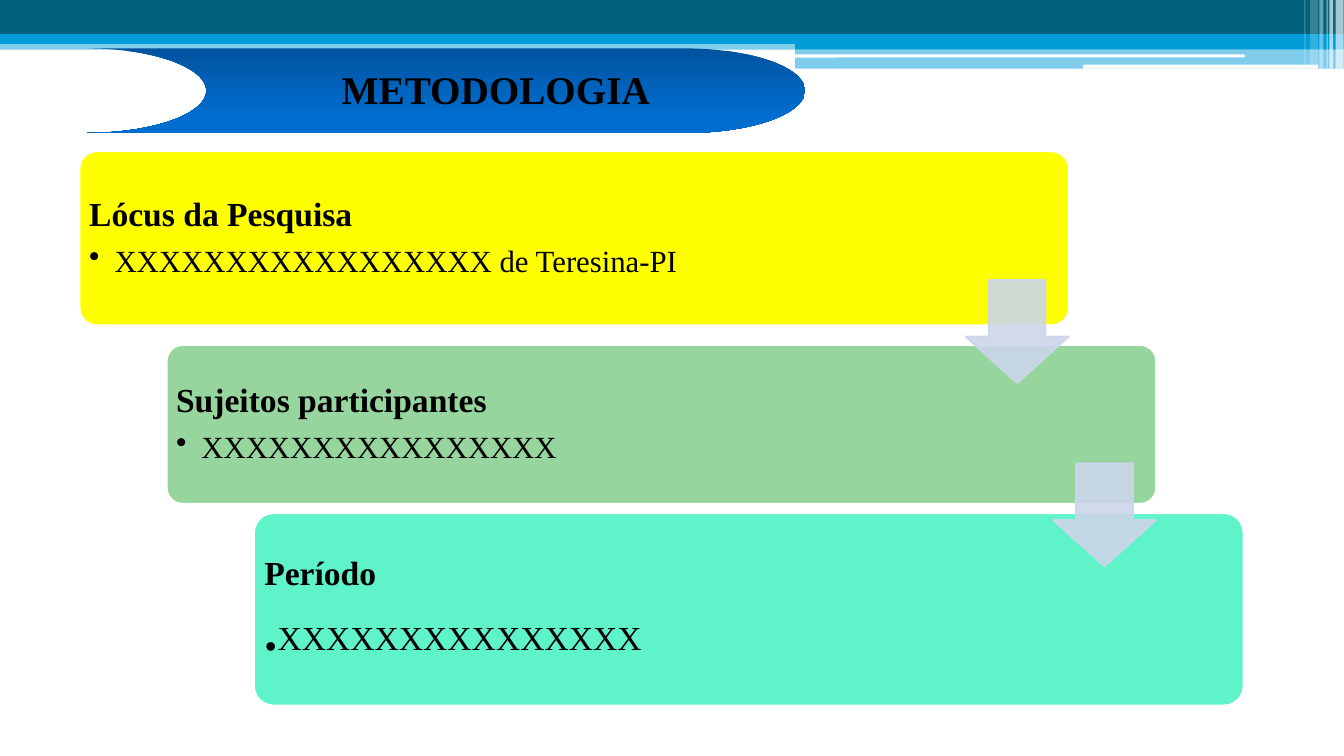
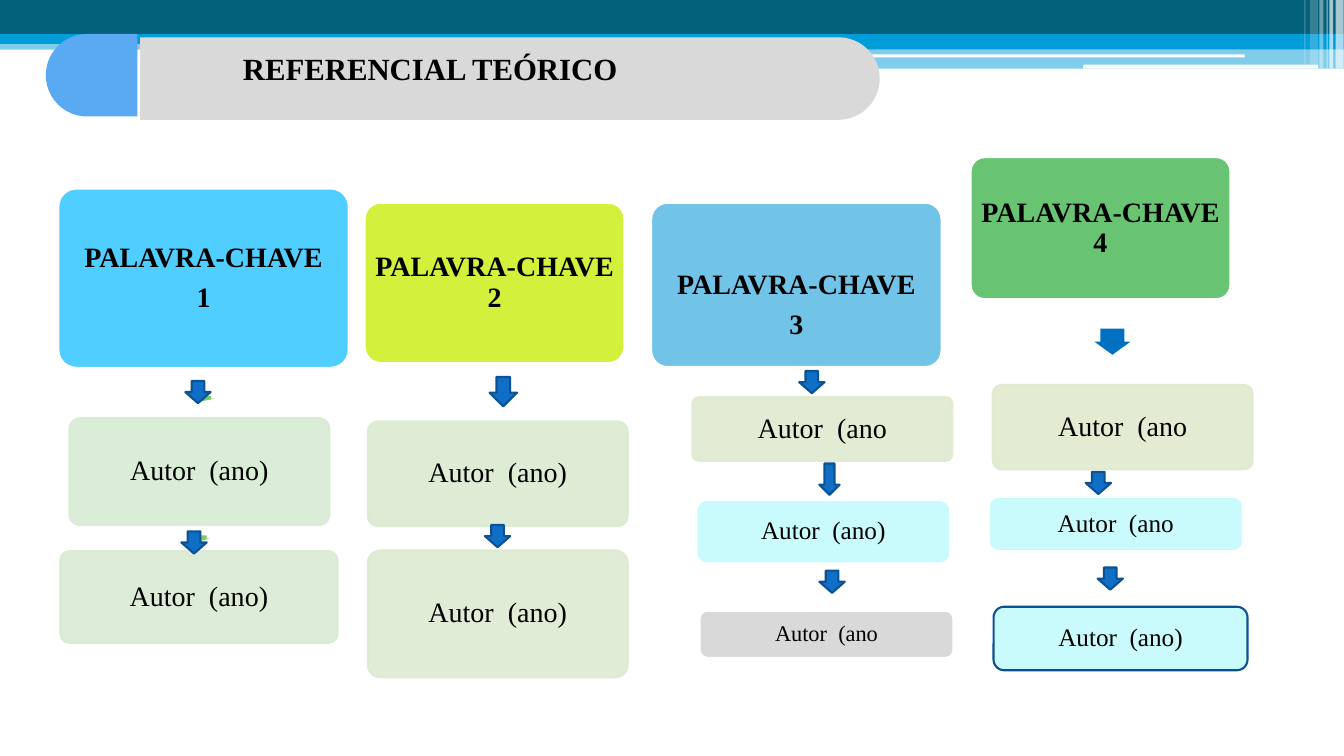
"""Builds two slides: research method and theoretical references."""
from lxml.etree import SubElement
from pptx import Presentation
from pptx.dml.color import RGBColor
from pptx.enum.shapes import MSO_SHAPE
from pptx.enum.text import MSO_ANCHOR, PP_ALIGN
from pptx.oxml.ns import qn
from pptx.util import Cm, Pt

FONT = "Times New Roman"
BLACK = RGBColor(0x00, 0x00, 0x00)
WHITE = RGBColor(0xFF, 0xFF, 0xFF)
TEAL = RGBColor(0x04, 0x61, 0x7B)
SKY = RGBColor(0x00, 0x9D, 0xD9)
BLUE = RGBColor(0x0F, 0x6F, 0xC6)
NAVY = RGBColor(0x0B, 0x52, 0x92)
DEEP = RGBColor(0x00, 0x53, 0x9F)
BRIGHT = RGBColor(0x00, 0x6D, 0xCF)
COBALT = RGBColor(0x00, 0x70, 0xC0)
AZURE = RGBColor(0x59, 0xAA, 0xF2)
GREY = RGBColor(0xD9, 0xD9, 0xD9)
YELLOW = RGBColor(0xFF, 0xFF, 0x00)
SAGE = RGBColor(0x96, 0xD6, 0x9E)
MINT = RGBColor(0x5F, 0xF3, 0xCA)
LILAC = RGBColor(0xCC, 0xD5, 0xEA)
CYAN = RGBColor(0x4F, 0xCE, 0xFF)
LIME = RGBColor(0xD2, 0xF0, 0x3C)
STEEL = RGBColor(0x72, 0xC3, 0xE8)
GREEN = RGBColor(0x68, 0xC4, 0x73)
LEAF = RGBColor(0x7C, 0xCA, 0x62)
ICE = RGBColor(0xC9, 0xFA, 0xFC)
PALE = [RGBColor.from_string(code) for code in
        ("D7ECD3", "D9EBD2", "DBEBD1", "DDEAD1", "DFEAD0", "E1E9CF")]

RECT, ROUND = MSO_SHAPE.RECTANGLE, MSO_SHAPE.ROUNDED_RECTANGLE
DOWN, TAB = MSO_SHAPE.DOWN_ARROW, MSO_SHAPE.ROUND_2_SAME_RECTANGLE
WIDE, HIGH = 33.87, 19.05

BANDS = [
    (RECT, (0, 1.02, WIDE, 0.23), SKY, 50),
    (RECT, (0, 0, WIDE, 0.86), TEAL, 100),
    (RECT, (0, 0.86, WIDE, 0.25), SKY, 100),
    (RECT, (20.04, 0.99, 13.83, 0.25), SKY, 100),
    (RECT, (20.04, 1.22, 13.83, 0.51), SKY, 50),
    (ROUND, (20.02, 1.37, 11.35, 0.08), WHITE, 100),
    (ROUND, (27.3, 1.63, 5.92, 0.1), WHITE, 100),
]
TICKS = [(33.66, 0.2, 1.73, 65), (33.5, 0.1, 1.73, 65),
         (33.43, 0.03, 1.73, 60), (33.25, 0.1, 1.73, 40),
         (33.02, 0.2, 1.63, 20), (32.87, 0.03, 1.63, 30)]

CARDS = [
    (3.81, 4.39, YELLOW, "Lócus da Pesquisa",
     [("XXXXXXXXXXXXXXXXX de Teresina-PI", 22, False)]),
    (8.69, 4.01, SAGE, "Sujeitos participantes",
     [("XXXXXXXXXXXXXXXX", 22, False)]),
    (12.93, 4.85, MINT, "Período",
     [(".", 38, True), ("XXXXXXXXXXXXXXX", 24, False)]),
]
STEPS = [7.06, 11.68]

KEYS = [
    ((1.47, 4.75, 7.32, 4.52), CYAN, ["PALAVRA-CHAVE", "1"], 0),
    ((9.19, 5.11, 6.55, 4.04), LIME, ["PALAVRA-CHAVE 2"], 0),
    ((16.41, 5.11, 7.32, 4.14), STEEL, ["PALAVRA-CHAVE", "3"], 1.05),
    ((24.46, 3.96, 6.55, 3.58), GREEN, ["PALAVRA-CHAVE 4"], 0),
]
FULL, OPEN = "Autor  (ano)", "Autor  (ano"
SOFT = [
    ((1.75, 10.54, 6.55, 2.69), FULL),
    ((1.52, 13.89, 6.99, 2.31), FULL),
    ((9.27, 10.62, 6.55, 2.64), FULL),
    ((9.27, 13.87, 6.55, 3.2), FULL),
    ((17.45, 10.01, 6.55, 1.6), OPEN),
    ((25.02, 9.7, 6.55, 2.13), OPEN),
]
PLAIN = [
    ((17.55, 12.6, 6.4, 1.6), ICE, WHITE, FULL, 18),
    ((17.63, 15.39, 6.4, 1.19), GREY, WHITE, OPEN, 16),
    ((24.92, 12.52, 6.4, 1.37), ICE, WHITE, OPEN, 18),
    ((25.04, 15.29, 6.4, 1.6), ICE, NAVY, FULL, 18),
]
SLIVERS = [((4.78, 9.98, 0.64, 0.13), LEAF), ((4.78, 13.49, 0.51, 0.15), LEAF),
           ((27.58, 8.28, 0.91, 0.66), COBALT)]
SMALL = (0.64, 0.56)
ARROWS = [(4.67, 9.6, *SMALL), (4.57, 13.39, *SMALL),
          (12.34, 9.5, 0.69, 0.74), (12.22, 13.23, *SMALL),
          (20.14, 9.35, *SMALL), (20.65, 11.68, 0.51, 0.79),
          (20.65, 14.38, *SMALL), (27.36, 11.89, *SMALL),
          (27.66, 14.3, *SMALL)]


def put(slide, kind, place, fill, line=None, alpha=100, adj=(), turn=0):
    shape = slide.shapes.add_shape(kind, *map(Cm, place))
    shape.shadow.inherit = False
    shape.rotation = turn
    for i, value in enumerate(adj):
        shape.adjustments[i] = value
    shape.fill.solid()
    shape.fill.fore_color.rgb = fill
    if line is None:
        shape.line.fill.background()
    else:
        shape.line.color.rgb = line
        shape.line.width = Pt(1.5)
    if alpha < 100:
        for color in shape.element.spPr.iter(qn("a:srgbClr")):
            SubElement(color, qn("a:alpha"), val=str(alpha * 1000))
    return shape


def write(frame, paras, align=PP_ALIGN.CENTER, side=0, top=0):
    frame.word_wrap = True
    frame.vertical_anchor = MSO_ANCHOR.MIDDLE
    frame.margin_left = frame.margin_right = Cm(side)
    frame.margin_top, frame.margin_bottom = Cm(top), 0
    for i, parts in enumerate(paras):
        para = frame.paragraphs[0] if i == 0 else frame.add_paragraph()
        para.alignment = align
        para.line_spacing = 0.9
        if i < len(paras) - 1:
            para.space_after = Pt(0.35 * parts[0][1])
        for text, size, bold in parts:
            run = para.add_run()
            run.text = text
            run.font.name, run.font.size = FONT, Pt(size)
            run.font.bold, run.font.color.rgb = bold, BLACK


def dot(para):
    props = para._p.get_or_add_pPr()
    props.set("marL", str(Cm(0.64)))
    props.set("indent", str(-Cm(0.64)))
    SubElement(props, qn("a:buChar"), char="•")


def title(slide, text, size, place):
    box = slide.shapes.add_textbox(*map(Cm, place))
    write(box.text_frame, [[(text, size, True)]])


def frame_up(slide, layout):
    ticks = [(RECT, (x, 0, w, h), WHITE, a) for x, w, h, a in TICKS]
    for kind, place, fill, alpha in BANDS + ticks:
        shape = put(slide, kind, place, fill, alpha=alpha)
        layout.shapes.element.append(shape.element)


def method(slide):
    for i, (top, high, fill, head, item) in enumerate(CARDS):
        card = put(slide, ROUND, (2 + 2.2 * i, top, 24.94, high), fill,
                   WHITE, adj=[0.1])
        write(card.text_frame, [[(head, 24, True)], item],
              PP_ALIGN.LEFT, 0.12)
        if len(item) == 1:
            dot(card.text_frame.paragraphs[1])
    for i, top in enumerate(STEPS):
        put(slide, DOWN, (24.34 + 2.2 * i, top, 2.59, 2.59), LILAC, LILAC,
            90, [0.55, 0.45])
    flag = put(slide, MSO_SHAPE.FLOWCHART_STORED_DATA,
               (2.18, 1.22, 18.11, 2.13), DEEP, turn=180)
    flag.fill.gradient()
    flag.fill.gradient_angle = 90
    for stop, color, spot in zip(flag.fill.gradient_stops,
                                 (DEEP, BRIGHT), (0, 0.8)):
        stop.color.rgb, stop.position = color, spot
    title(slide, "METODOLOGIA", 28, (3.86, 1.6, 17.27, 1.45))


def theory(slide):
    for place, fill, lines, top in KEYS:
        box = put(slide, ROUND, place, fill, WHITE, adj=[0.1])
        write(box.text_frame, [[(line, 20, True)] for line in lines], top=top)
    for (place, text), fill in zip(SOFT, PALE):
        box = put(slide, ROUND, place, fill, fill, 90, [0.1])
        write(box.text_frame, [[(text, 20, False)]])
    for place, fill, line, text, size in PLAIN:
        box = put(slide, ROUND, place, fill, line)
        write(box.text_frame, [[(text, size, False)]])
    for place, fill in SLIVERS:
        put(slide, DOWN, place, fill, adj=[0.67, 0.5])
    for place in ARROWS:
        put(slide, DOWN, place, BLUE, NAVY)
    put(slide, TAB, (11.81, -7.34, 2.08, 18.64), GREY, adj=[0.5, 0], turn=90)
    put(slide, TAB, (1.27, 0.74, 2.08, 2.31), AZURE, adj=[0.5, 0], turn=270)
    title(slide, "REFERENCIAL TEÓRICO", 22, (3.45, 1.19, 14.78, 1.19))


def main():
    deck = Presentation()
    deck.slide_width, deck.slide_height = Cm(WIDE), Cm(HIGH)
    blank = deck.slide_layouts[6]
    first, second = [deck.slides.add_slide(blank) for _ in range(2)]
    frame_up(first, blank)
    method(first)
    theory(second)
    deck.save("out.pptx")


if __name__ == "__main__":
    main()
